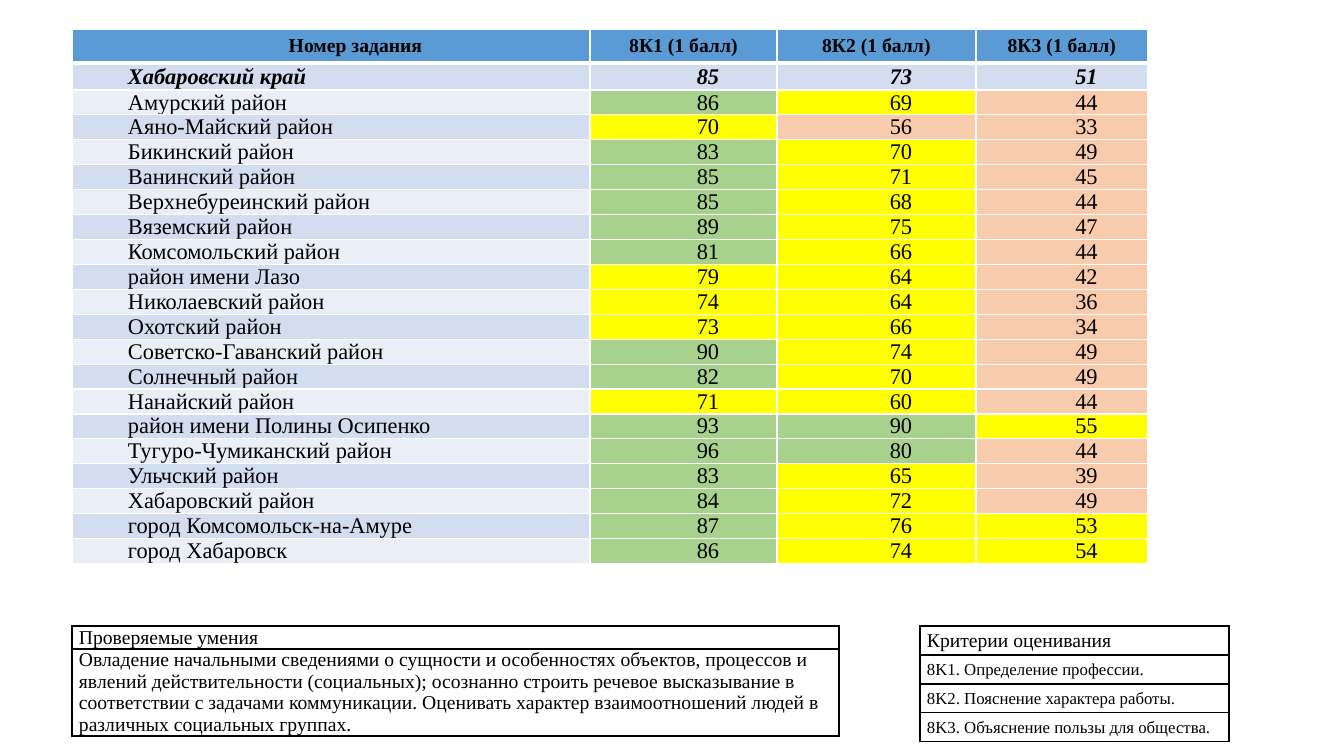
from lxml import etree
from pptx import Presentation
from pptx.dml.color import RGBColor
from pptx.enum.text import MSO_ANCHOR, PP_ALIGN
from pptx.oxml.ns import qn
from pptx.util import Pt

PX = 914400 / 100.8
LEFT, CENTER = PP_ALIGN.LEFT, PP_ALIGN.CENTER
MIDDLE = MSO_ANCHOR.MIDDLE
FONT = "Times New Roman"
BLACK = RGBColor(0x00, 0x00, 0x00)
WHITE = RGBColor(0xFF, 0xFF, 0xFF)
BLUE = RGBColor(0x5B, 0x9B, 0xD5)
BANDS = RGBColor(0xEA, 0xEF, 0xF7), RGBColor(0xD2, 0xDE, 0xEF)
GREEN = RGBColor(0xA9, 0xD1, 0x8E)
YELLOW = RGBColor(0xFF, 0xFF, 0x00)
PINK = RGBColor(0xF8, 0xCB, 0xAD)

HIGH_SCORE = 80
MIDDLE_SCORES = 60, 60, 50  # lower limit of yellow for each criterion
FIRST_LINE_INDENT = 49

HEADINGS = ["Номер задания", "8К1 (1 балл)", "8К2 (1 балл)", "8К3 (1 балл)"]
RESULTS = [
    ("Хабаровский край", 85, 73, 51),
    ("Амурский район", 86, 69, 44),
    ("Аяно-Майский район", 70, 56, 33),
    ("Бикинский район", 83, 70, 49),
    ("Ванинский район", 85, 71, 45),
    ("Верхнебуреинский район", 85, 68, 44),
    ("Вяземский район", 89, 75, 47),
    ("Комсомольский район", 81, 66, 44),
    ("район имени Лазо", 79, 64, 42),
    ("Николаевский район", 74, 64, 36),
    ("Охотский район", 73, 66, 34),
    ("Советско-Гаванский район", 90, 74, 49),
    ("Солнечный район", 82, 70, 49),
    ("Нанайский район", 71, 60, 44),
    ("район имени Полины Осипенко", 93, 90, 55),
    ("Тугуро-Чумиканский район", 96, 80, 44),
    ("Ульчский район", 83, 65, 39),
    ("Хабаровский район", 84, 72, 49),
    ("город Комсомольск-на-Амуре", 87, 76, 53),
    ("город Хабаровск", 86, 74, 54),
]
CRITERIA = [
    "Критерии оценивания",
    "8K1. Определение профессии.",
    "8K2. Пояснение характера работы.",
    "8K3. Объяснение пользы для общества.",
]
SKILLS = [
    "Проверяемые умения",
    "Овладение начальными сведениями о сущности и особенностях объектов, "
    "процессов и явлений действительности (социальных); осознанно строить "
    "речевое высказывание в соответствии с задачами коммуникации. Оценивать "
    "характер взаимоотношений людей в различных социальных группах.",
]


def px(length):
    return round(length * PX)


def add_grid(left, top, widths, heights):
    frame = slide.shapes.add_table(len(heights), len(widths), px(left), px(top),
                                   px(sum(widths)), px(sum(heights)))
    grid = frame.table
    grid.first_row = grid.horz_banding = False
    for column, width in zip(grid.columns, widths):
        column.width = px(width)
    for row, height in zip(grid.rows, heights):
        row.height = px(height)
    return grid


def fill_cell(cell, text, size, align=LEFT, fill=None, line=BLACK, top=1, bottom=1):
    cell.vertical_anchor = MIDDLE
    cell.margin_left = cell.margin_right = px(7)
    cell.margin_top = cell.margin_bottom = 0
    properties = cell._tc.get_or_add_tcPr()
    for side, width in (("L", 1), ("R", 1), ("T", top), ("B", bottom)):
        border = etree.SubElement(properties, qn(f"a:ln{side}"), w=str(Pt(width)))
        solid = etree.SubElement(border, qn("a:solidFill"))
        etree.SubElement(solid, qn("a:srgbClr"), val=str(line))
    if fill is None:
        cell.fill.background()
    else:
        cell.fill.solid()
        cell.fill.fore_color.rgb = fill
    cell.text = str(text)
    paragraph = cell.text_frame.paragraphs[0]
    paragraph.alignment = align
    paragraph.font.name = FONT
    paragraph.font.size = Pt(size)
    paragraph.font.color.rgb = BLACK
    return paragraph


prs = Presentation()
prs.slide_width, prs.slide_height = px(1344), px(756)
slide = prs.slides.add_slide(prs.slide_layouts[6])

# Results by district: heading row
results = add_grid(72, 29, [518, 187, 199, 172], [34, 27] + [24] * (len(RESULTS) - 1))
for column, heading in enumerate(HEADINGS):
    paragraph = fill_cell(results.cell(0, column), heading, 14, CENTER, BLUE, WHITE, bottom=3)
    paragraph.font.bold = True
    if column == 0:
        paragraph._p.get_or_add_pPr().set("indent", str(px(FIRST_LINE_INDENT)))

# Results by district: whole region first, then scores coloured by level
for row, result in enumerate(RESULTS, start=1):
    is_region = row == 1
    for column, value in enumerate(result):
        if is_region or column == 0:
            fill = BANDS[row % 2]
        elif value >= HIGH_SCORE:
            fill = GREEN
        elif value >= MIDDLE_SCORES[column - 1]:
            fill = YELLOW
        else:
            fill = PINK
        paragraph = fill_cell(results.cell(row, column), value, 16,
                              CENTER if column else LEFT, fill, WHITE,
                              top=3 if is_region else 1)
        paragraph.font.bold = paragraph.font.italic = is_region
        paragraph._p.get_or_add_pPr().set("indent", str(px(FIRST_LINE_INDENT)))

# Grading criteria
criteria = add_grid(920, 626, [309], [29] * len(CRITERIA))
for row, criterion in enumerate(CRITERIA):
    fill_cell(criteria.cell(row, 0), criterion, 12 if row else 14)

# Skills under test
skills = add_grid(72, 626, [767], [23, 87])
for row, skill in enumerate(SKILLS):
    fill_cell(skills.cell(row, 0), skill, 14)

prs.save("out.pptx")
